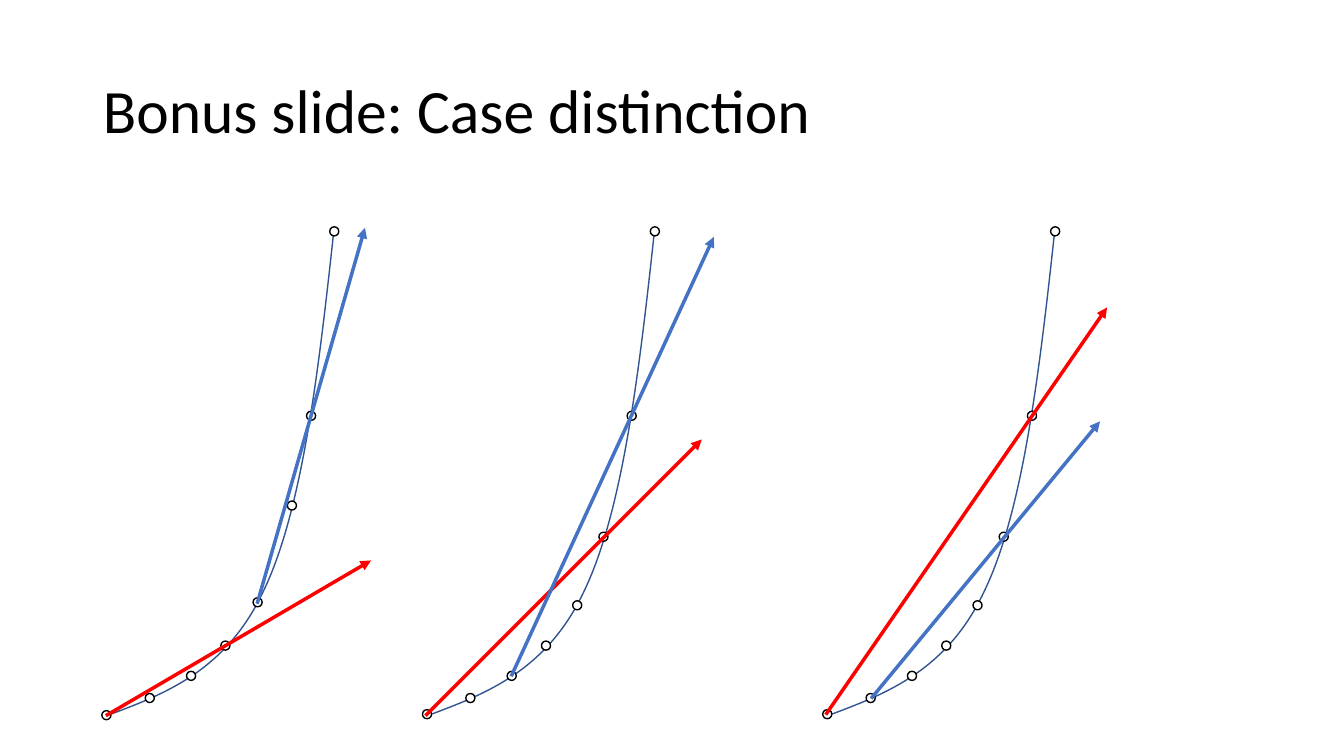
from lxml import etree
from pptx import Presentation
from pptx.dml.color import RGBColor
from pptx.enum.shapes import MSO_CONNECTOR, MSO_SHAPE
from pptx.enum.text import MSO_ANCHOR, MSO_AUTO_SIZE, PP_ALIGN
from pptx.oxml.ns import qn
from pptx.util import Inches, Pt

STRAIGHT = MSO_CONNECTOR.STRAIGHT
OVAL = MSO_SHAPE.OVAL
MIDDLE = MSO_ANCHOR.MIDDLE
NO_FIT = MSO_AUTO_SIZE.NONE
LEFT = PP_ALIGN.LEFT

BLACK = RGBColor(0x00, 0x00, 0x00)
WHITE = RGBColor(0xFF, 0xFF, 0xFF)
RED = RGBColor(0xFF, 0x00, 0x00)
BLUE = RGBColor(0x44, 0x72, 0xC4)
NAVY = RGBColor(0x32, 0x54, 0x91)

DOT = 0.09
START = (0, 7.1)
BEZIERS = [
    [(0.59, 6.88), (1.19, 6.65), (1.56, 5.85)],
    [(1.94, 5.05), (2.1, 3.68), (2.25, 2.3)],
]
LOW_DOTS = [(0.38, 6.88), (0.79, 6.66), (1.13, 6.36)]
HIGH_DOTS = [(1.98, 4.08), (2.21, 2.25)]
CASES = [
    (1.06, [(-0.05, 7.05), (1.45, 5.93), (1.79, 4.97)],
     [(RED, -0.01, 7.1, 2.62, 5.56), (BLUE, 1.49, 5.99, 2.56, 2.26)]),
    (4.24, [(-0.05, 7.04), (1.44, 5.96), (1.7, 5.28)],
     [(RED, -0.02, 7.1, 2.72, 4.36), (BLUE, 0.83, 6.71, 2.84, 2.35)]),
    (8.21, [(-0.05, 7.04), (1.44, 5.96), (1.7, 5.28)],
     [(RED, -0.02, 7.09, 2.77, 3.05), (BLUE, 0.43, 6.93, 2.7, 4.18)]),
]


def write_text(sp, text, size, color, font="Calibri", align=LEFT, spacing=0.9):
    tf = sp.text_frame
    tf.word_wrap = True
    tf.auto_size = NO_FIT
    tf.vertical_anchor = MIDDLE
    p = tf.paragraphs[0]
    p.alignment = align
    p.line_spacing = spacing
    r = p.add_run()
    r.text = text
    r.font.name = font
    r.font.size = Pt(size)
    r.font.color.rgb = color


def set_line(sp, color, width):
    sp.line.color.rgb = color
    sp.line.width = Pt(width)


prs = Presentation()
prs.slide_width = Inches(13.33)
prs.slide_height = Inches(7.5)
slide = prs.slides.add_slide(prs.slide_layouts[5])

title = slide.shapes.title
title.left, title.top = Inches(0.92), Inches(0.4)
title.width, title.height = Inches(11.5), Inches(1.45)
write_text(title, "Bonus slide: Case distinction", size=44, color=BLACK)

for x0, own_dots, arrows in CASES:
    shapes = slide.shapes.add_group_shape().shapes

    builder = shapes.build_freeform(Inches(x0 + START[0]), Inches(START[1]))
    builder.add_line_segments(
        [(Inches(x0 + b[-1][0]), Inches(b[-1][1])) for b in BEZIERS], close=False)
    curve = builder.convert_to_shape()
    segments = list(curve._element.iter(qn("a:lnTo")))
    for segment, bezier in zip(segments, BEZIERS):
        cubic = etree.Element(qn("a:cubicBezTo"))
        for x, y in bezier:
            etree.SubElement(cubic, qn("a:pt"),
                             x=str(Inches(x0 + x) - curve.left),
                             y=str(Inches(y) - curve.top))
        segment.getparent().replace(segment, cubic)
    curve.fill.background()
    curve.shadow.inherit = False
    set_line(curve, NAVY, 1)

    for x, y in LOW_DOTS + own_dots + HIGH_DOTS:
        dot = shapes.add_shape(OVAL, Inches(x0 + x), Inches(y), Inches(DOT), Inches(DOT))
        dot.fill.solid()
        dot.fill.fore_color.rgb = WHITE
        dot.shadow.inherit = False
        set_line(dot, BLACK, 1)

    for color, x1, y1, x2, y2 in arrows:
        arrow = shapes.add_connector(
            STRAIGHT, Inches(x0 + x1), Inches(y1), Inches(x0 + x2), Inches(y2))
        set_line(arrow, color, 2.5)
        sp_pr = arrow._element.spPr
        etree.SubElement(sp_pr.find(qn("a:ln")), qn("a:tailEnd"), type="triangle")
        etree.SubElement(sp_pr, qn("a:effectLst"))

prs.save("out.pptx")
